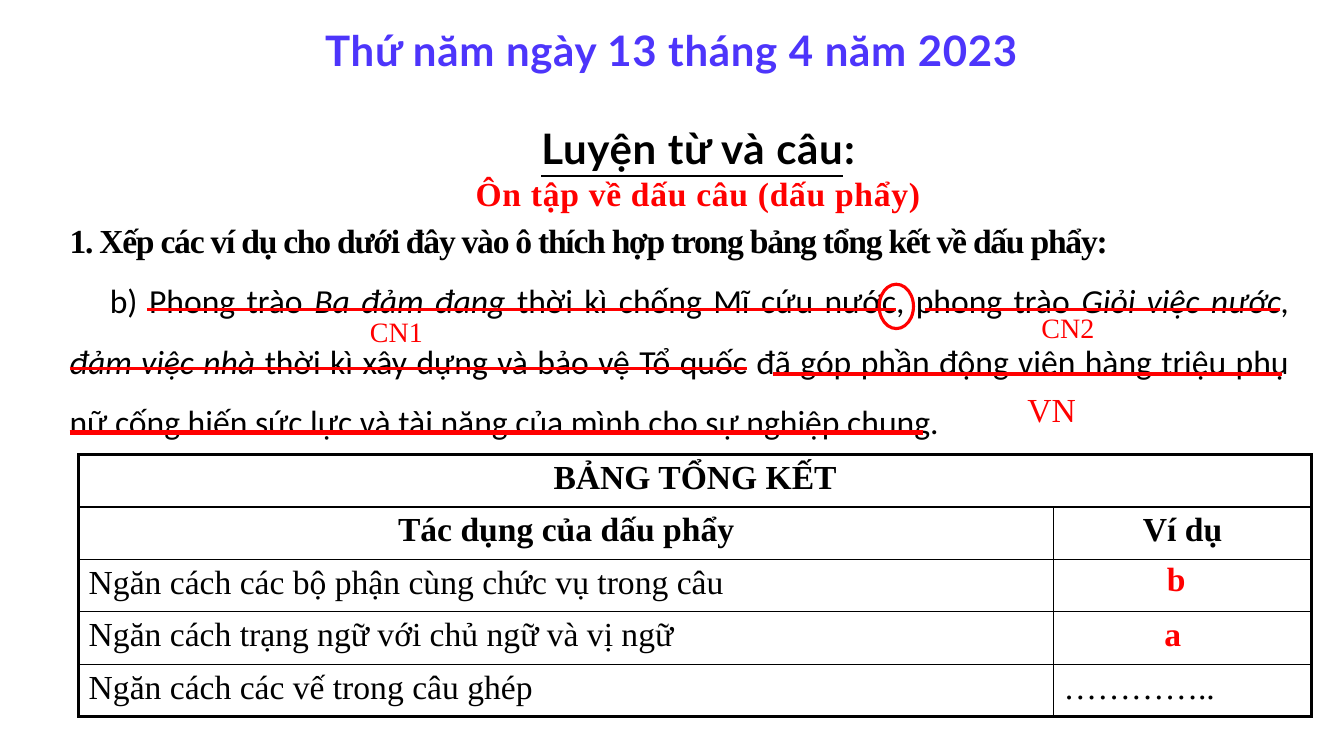
"""Build a Vietnamese grammar slide reviewing the uses of the comma."""
from dataclasses import dataclass

from lxml.etree import SubElement
from pptx import Presentation
from pptx.dml.color import RGBColor
from pptx.enum.shapes import MSO_CONNECTOR, MSO_SHAPE
from pptx.enum.text import MSO_AUTO_SIZE, PP_ALIGN
from pptx.oxml.ns import qn
from pptx.slide import Slide
from pptx.table import _Cell
from pptx.text.text import TextFrame, _Paragraph
from pptx.util import Inches, Pt

BLACK = RGBColor(0, 0, 0)
RED = RGBColor(255, 0, 0)
WHITE = RGBColor(255, 255, 255)
VIOLET = RGBColor(0x4D, 0x35, 0xFB)
SERIF = "Times New Roman"
OUTER, INNER = 2.25, 1


@dataclass(frozen=True)
class Span:
    text: str
    size: float = 24
    font: str = SERIF
    color: RGBColor = BLACK
    bold: bool = False
    italic: bool = False
    underline: bool = False
    spacing: float = 0


@dataclass(frozen=True)
class Para:
    spans: tuple[Span, ...]
    align: PP_ALIGN = PP_ALIGN.LEFT
    line_spacing: float = 1
    indent: float = 0
    margin: float = 0
    space_before: int = 0


@dataclass(frozen=True)
class Box:
    left: float
    top: float
    width: float
    height: float
    paras: tuple[Para, ...]
    wrap: bool = True
    inset: tuple[float, float] = (0.1, 0.05)
    fill: RGBColor | None = None


@dataclass(frozen=True)
class Underline:
    left: float
    right: float
    top: float
    weight: float = 2.25


def body(text: str, italic: bool = False) -> Span:
    """Return a span of the example sentence."""
    return Span(text, font="Calibri", italic=italic)


def label(text: str, left: float, top: float, width: float, height: float, size: float) -> Box:
    """Return a red label naming a part of the sentence."""
    return Box(left, top, width, height, (Para((Span(text, size, color=RED),)),), wrap=False)


def entry(text: str, header: bool = False, color: RGBColor = BLACK, margin: float = 0) -> Para:
    """Return the paragraph of a table cell."""
    align = PP_ALIGN.CENTER if header else PP_ALIGN.LEFT
    span = Span(text, color=color, bold=header or color == RED)
    return Para((span,), align, margin=margin, space_before=20)


BOXES = (
    Box(2.92, 1.17, 8.01, 1.01, (
        Para((Span("Luyện từ và câu", 30, "Lato", bold=True, underline=True, spacing=0.5),
              Span(":", 30, "Lato", bold=True, spacing=0.5)), PP_ALIGN.CENTER),
        Para((Span("Ôn tập về dấu câu (dấu phẩy)", color=RED, bold=True, spacing=0.5),),
             PP_ALIGN.CENTER),
    )),
    Box(0.57, 2.12, 12.34, 2.34, (
        Para((Span("1. Xếp các ví dụ cho dưới đây vào ô thích hợp trong bảng tổng kết về dấu phẩy:",
                   bold=True, spacing=-0.9),), PP_ALIGN.JUSTIFY),
        Para((body("b) Phong trào "),
              body("Ba đảm đang ", True),
              body("thời kì chống Mĩ cứu nước, phong trào "),
              body("Giỏi việc nước, đảm việc nhà ", True),
              body("thời kì xây dựng và bảo vệ Tổ quốc đã góp phần động viên hàng triệu phụ nữ "
                   "cống hiến sức lực và tài năng của mình cho sự nghiệp chung.")),
             PP_ALIGN.JUSTIFY, line_spacing=1.5, indent=0.4),
    ), inset=(0.12, 0.06)),
    label("CN1", 3.57, 3.07, 0.73, 0.44, 20),
    label("CN2", 10.23, 3.03, 0.73, 0.44, 20),
    label("VN", 10.09, 3.81, 0.69, 0.5, 24),
    Box(10.53, 5.56, 2.27, 0.42,
        (Para((Span("b", color=RED, bold=True),), PP_ALIGN.CENTER, line_spacing=0.8),),
        fill=WHITE),
    Box(0.97, 0.19, 11.39, 0.61, (
        Para((Span("Thứ năm ngày 13 tháng 4 năm 2023", 30, "Lato", VIOLET, True, spacing=0.5),),
             PP_ALIGN.CENTER),
    )),
)
UNDERLINES = (
    Underline(1.46, 8.89, 3.07),
    Underline(9.17, 12.7, 3.07),
    Underline(0.69, 7.41, 3.66),
    Underline(7.67, 12.72, 3.71, 3),
    Underline(0.69, 9.15, 4.29, 3),
)
COLUMNS = (9.67, 2.56)
ROW_HEIGHT = 0.52
SUMMARY = (
    (entry("BẢNG TỔNG KẾT", True), None),
    (entry("Tác dụng của dấu phẩy", True), entry("Ví dụ", True)),
    (entry("Ngăn cách các bộ phận cùng chức vụ trong câu"), None),
    (entry("Ngăn cách trạng ngữ với chủ ngữ và vị ngữ"), entry("a", color=RED, margin=1)),
    (entry("Ngăn cách các vế trong câu ghép"), entry("…………..")),
)


def write_paragraph(paragraph: _Paragraph, para: Para) -> None:
    """Fill a paragraph with formatted spans."""
    paragraph.alignment = para.align
    paragraph.line_spacing = para.line_spacing
    properties = paragraph._p.get_or_add_pPr()
    properties.set("marL", str(Inches(para.margin)))
    properties.set("indent", str(Inches(para.indent)))
    if para.space_before:
        before = SubElement(properties, qn("a:spcBef"))
        SubElement(before, qn("a:spcPct"), val=str(para.space_before * 1000))
    for span in para.spans:
        run = paragraph.add_run()
        run.text = span.text
        font = run.font
        font.size, font.name = Pt(span.size), span.font
        font.bold, font.italic, font.underline = span.bold, span.italic, span.underline
        font.color.rgb = span.color
        run._r.get_or_add_rPr().set("spc", str(round(span.spacing * 100)))


def write_frame(frame: TextFrame, paras: tuple[Para, ...]) -> None:
    """Write paragraphs into a text frame."""
    for index, para in enumerate(paras):
        write_paragraph(frame.add_paragraph() if index else frame.paragraphs[0], para)


def add_box(page: Slide, box: Box) -> None:
    """Add a text box."""
    shape = page.shapes.add_textbox(*map(Inches, (box.left, box.top, box.width, box.height)))
    if box.fill is not None:
        shape.fill.solid()
        shape.fill.fore_color.rgb = box.fill
    frame = shape.text_frame
    frame.word_wrap = box.wrap
    frame.auto_size = MSO_AUTO_SIZE.SHAPE_TO_FIT_TEXT
    frame.margin_left = frame.margin_right = Inches(box.inset[0])
    frame.margin_top = frame.margin_bottom = Inches(box.inset[1])
    write_frame(frame, box.paras)


def add_underline(page: Slide, mark: Underline) -> None:
    """Add a red line beneath part of the sentence."""
    ends = map(Inches, (mark.left, mark.top, mark.right, mark.top))
    line = page.shapes.add_connector(MSO_CONNECTOR.STRAIGHT, *ends)
    line.line.color.rgb = RED
    line.line.width = Pt(mark.weight)
    SubElement(line._element.spPr, qn("a:effectLst"))


def add_borders(cell: _Cell, edges: dict[str, bool]) -> None:
    """Draw cell borders, heavier on the outside of the table."""
    properties = cell._tc.get_or_add_tcPr()
    for side, outside in edges.items():
        border = SubElement(properties, qn(f"a:ln{side}"), w=str(Pt(OUTER if outside else INNER)))
        SubElement(SubElement(border, qn("a:solidFill")), qn("a:srgbClr"), val=str(BLACK))


def add_summary(page: Slide) -> None:
    """Add the summary table."""
    last_row, last_column = len(SUMMARY) - 1, len(COLUMNS) - 1
    size = (sum(COLUMNS), ROW_HEIGHT * len(SUMMARY))
    table = page.shapes.add_table(len(SUMMARY), len(COLUMNS),
                                  *map(Inches, (0.78, 4.51, *size))).table
    table.first_row = table.horz_banding = False
    for column, width in zip(table.columns, COLUMNS):
        column.width = Inches(width)
    table.cell(0, 0).merge(table.cell(0, last_column))
    for row, entries in enumerate(SUMMARY):
        table.rows[row].height = Inches(ROW_HEIGHT)
        for column, para in enumerate(entries):
            cell = table.cell(row, column)
            add_borders(cell, {"L": column == 0, "R": column == last_column or row == 0,
                               "T": row == 0, "B": row == last_row})
            cell.fill.background()
            if para:
                write_frame(cell.text_frame, (para,))


def main() -> None:
    """Build and save the deck."""
    deck = Presentation()
    deck.slide_width, deck.slide_height = Inches(13.33), Inches(7.5)
    page = deck.slides.add_slide(deck.slide_layouts[6])
    add_summary(page)
    for box in BOXES:
        add_box(page, box)
    for mark in UNDERLINES:
        add_underline(page, mark)
    comma_ring = page.shapes.add_shape(MSO_SHAPE.OVAL, *map(Inches, (8.72, 2.82, 0.34, 0.44)))
    comma_ring.shadow.inherit = False
    comma_ring.fill.background()
    comma_ring.line.color.rgb = RED
    comma_ring.line.width = Pt(2.25)
    deck.save("out.pptx")


if __name__ == "__main__":
    main()
